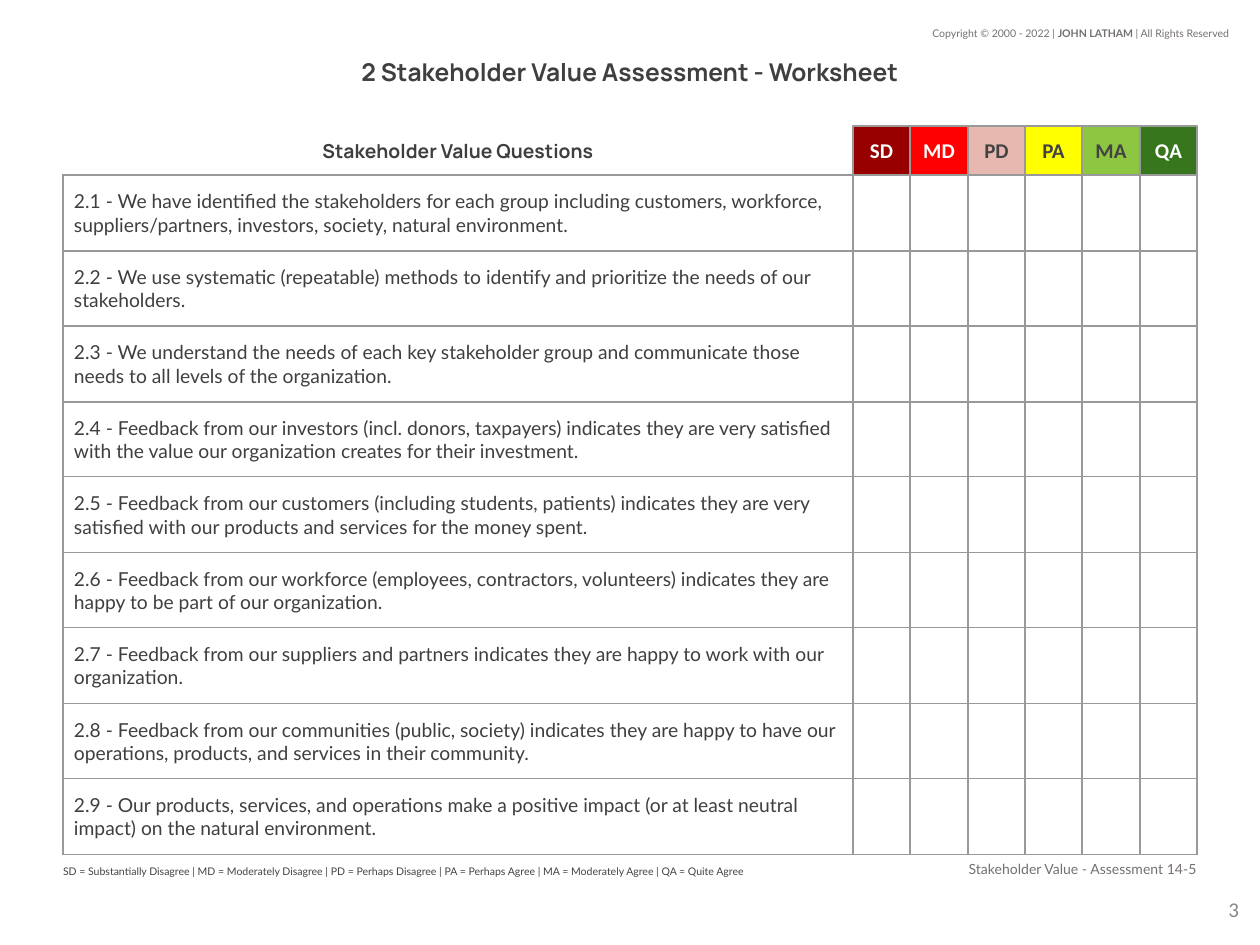
from dataclasses import dataclass
from lxml import etree
from pptx import Presentation
from pptx import util as u
from pptx.dml.color import RGBColor
from pptx.enum import shapes, text
from pptx.oxml import ns


@dataclass(frozen=True)
class Theme:
    ink: str = "3F3F3F"
    dark: str = "434343"
    gray: str = "757070"
    pale: str = "888888"
    white: str = "FFFFFF"
    rule: str = "999999"
    head: str = "Manrope"
    body: str = "Lato"
    mark: str = "Calibri"
    tiny: int = 6
    small: int = 8
    text: int = 11
    label: int = 12
    title: int = 14
    line: float = 0.75


T = Theme()
LEFT, MID, RIGHT = text.PP_ALIGN.LEFT, text.PP_ALIGN.CENTER, text.PP_ALIGN.RIGHT
SCALE = 914400 / 126

SCORES = [
    ("SD", "980000", T.white),
    ("MD", "FF0000", T.white),
    ("PD", "E6B8AF", T.dark),
    ("PA", "FFFF00", T.dark),
    ("MA", "8DC640", T.dark),
    ("QA", "38761D", T.white),
]

ITEMS = [
    "We have identified the stakeholders for each group including customers, workforce, suppliers/partners, investors, society, natural environment.",
    "We use systematic (repeatable) methods to identify and prioritize the needs of our stakeholders.",
    "We understand the needs of each key stakeholder group and communicate those needs to all levels of the organization.",
    "Feedback from our investors (incl. donors, taxpayers) indicates they are very satisfied with the value our organization creates for their investment.",
    "Feedback from our customers (including students, patients) indicates they are very satisfied with our products and services for the money spent.",
    "Feedback from our workforce (employees, contractors, volunteers) indicates they are happy to be part of our organization.",
    "Feedback from our suppliers and partners indicates they are happy to work with our organization.",
    "Feedback from our communities (public, society) indicates they are happy to have our operations, products, and services in their community.",
    "Our products, services, and operations make a positive impact (or at least neutral impact) on the natural environment.",
]


def px(n):
    return u.Emu(round(n * SCALE))


def split(size, count):
    edges = [round(size * i / count) for i in range(count + 1)]
    return [(a, b - a) for a, b in zip(edges, edges[1:])]


def style(font, face, size, color, bold=False):
    font.name, font.size, font.bold = face, u.Pt(size), bold
    font.color.rgb = RGBColor.from_string(color)


def write(shape, words, face, size, color, bold=False, align=LEFT, pads=(13, 13, 13, 13)):
    frame = shape.text_frame
    frame.text = words
    frame.word_wrap = True
    frame.auto_size = text.MSO_AUTO_SIZE.NONE
    frame.vertical_anchor = text.MSO_ANCHOR.MIDDLE
    frame.margin_left, frame.margin_top, frame.margin_right, frame.margin_bottom = map(px, pads)
    para = frame.paragraphs[0]
    para.alignment = align
    for run in para.runs:
        style(run.font, face, size, color, bold)
    return para


def label(slide, box, *args, **opts):
    return write(slide.shapes.add_textbox(*map(px, box)), *args, **opts)


def credit(slide, box):
    para = label(slide, box, "Copyright © 2000 - 2022 | ", T.body, T.tiny, T.gray,
                 align=RIGHT, pads=(13, 6, 13, 6))
    for words, bold in (("JOHN LATHAM ", True), ("| All Rights Reserved", False)):
        run = para.add_run()
        run.text = words
        style(run.font, T.body, T.tiny, T.gray, bold)


def title(slide, box):
    shape = slide.shapes.title
    shape.left, shape.top, shape.width, shape.height = map(px, box)
    write(shape, "2 Stakeholder Value Assessment - Worksheet", T.head, T.title, T.ink, True, MID)


def header(slide, box, wide):
    x, y, w, h = box
    label(slide, (x, y, wide, h), "Stakeholder Value Questions", T.head, T.text, T.ink, True, MID)
    for (name, fill, ink), (dx, size) in zip(SCORES, split(w - wide, len(SCORES))):
        tile = slide.shapes.add_shape(shapes.MSO_SHAPE.RECTANGLE,
                                      *map(px, (x + wide + dx, y, size, h)))
        tile.shadow.inherit = False
        tile.fill.solid()
        tile.fill.fore_color.rgb = RGBColor.from_string(fill)
        tile.line.color.rgb = RGBColor.from_string(T.rule)
        tile.line.width = u.Pt(T.line)
        write(tile, name, T.mark, T.label, ink, True, MID)


def border(cell):
    props = cell._tc.get_or_add_tcPr()
    for i, side in enumerate(("lnL", "lnR", "lnT", "lnB")):
        line = etree.Element(ns.qn("a:" + side), w=str(u.Pt(T.line)))
        fill = etree.SubElement(line, ns.qn("a:solidFill"))
        etree.SubElement(fill, ns.qn("a:srgbClr"), val=T.rule)
        props.insert(i, line)


def grid(slide, box, wide):
    x, y, w, h = box
    table = slide.shapes.add_table(len(ITEMS), len(SCORES) + 1, *map(px, box)).table
    table.first_row = table.horz_banding = False
    sizes = [wide] + [size for _, size in split(w - wide, len(SCORES))]
    for col, size in zip(table.columns, sizes):
        col.width = px(size)
    for n, (row, item, (_, size)) in enumerate(zip(table.rows, ITEMS, split(h, len(ITEMS))), 1):
        row.height = px(size)
        for cell in row.cells:
            cell.fill.background()
            border(cell)
        cell = row.cells[0]
        cell.text = f"2.{n} - {item}"
        cell.vertical_anchor = text.MSO_ANCHOR.MIDDLE
        cell.margin_left = cell.margin_right = cell.margin_top = cell.margin_bottom = px(11)
        style(cell.text_frame.paragraphs[0].runs[0].font, T.body, T.text, T.ink)


def footer(slide, box, wide):
    x, y, w, h = box
    scale = ("SD = Substantially Disagree | MD = Moderately Disagree | PD = Perhaps Disagree"
             " | PA = Perhaps Agree | MA = Moderately Agree | QA = Quite Agree")
    label(slide, (x, y, wide, h), scale, T.body, T.tiny, T.dark, pads=(0, 13, 13, 13))
    label(slide, (x + wide, y + 1, w - wide, h - 7), "Stakeholder Value - Assessment 14-5",
          T.body, T.small, T.gray, align=RIGHT, pads=(13, 13, 0, 13))


def main():
    deck = Presentation()
    deck.slide_width, deck.slide_height = px(1260), px(945)
    slide = deck.slides.add_slide(deck.slide_layouts[5])
    x, w, wide = 63, 1134, 790
    credit(slide, (917, 21, 325, 25))
    title(slide, (x, 53, w, 38))
    grid(slide, (x, 175, w, 680), wide)
    header(slide, (x, 126, w, 49), wide)
    footer(slide, (x, 854, w, 35), wide)
    label(slide, (1177, 873, 75, 72), "3", T.mark, T.label, T.pale, align=RIGHT)
    deck.save("out.pptx")


if __name__ == "__main__":
    main()
